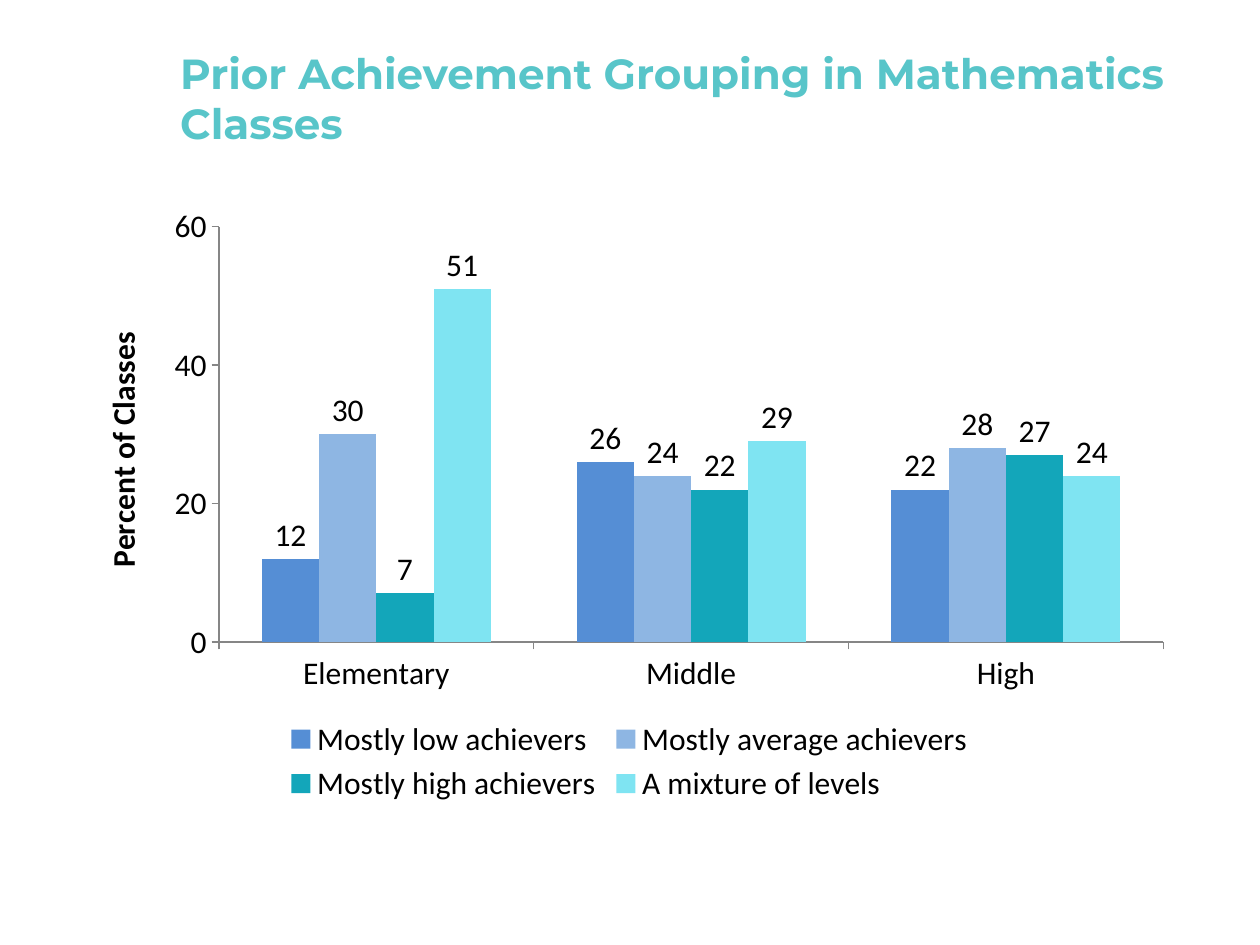
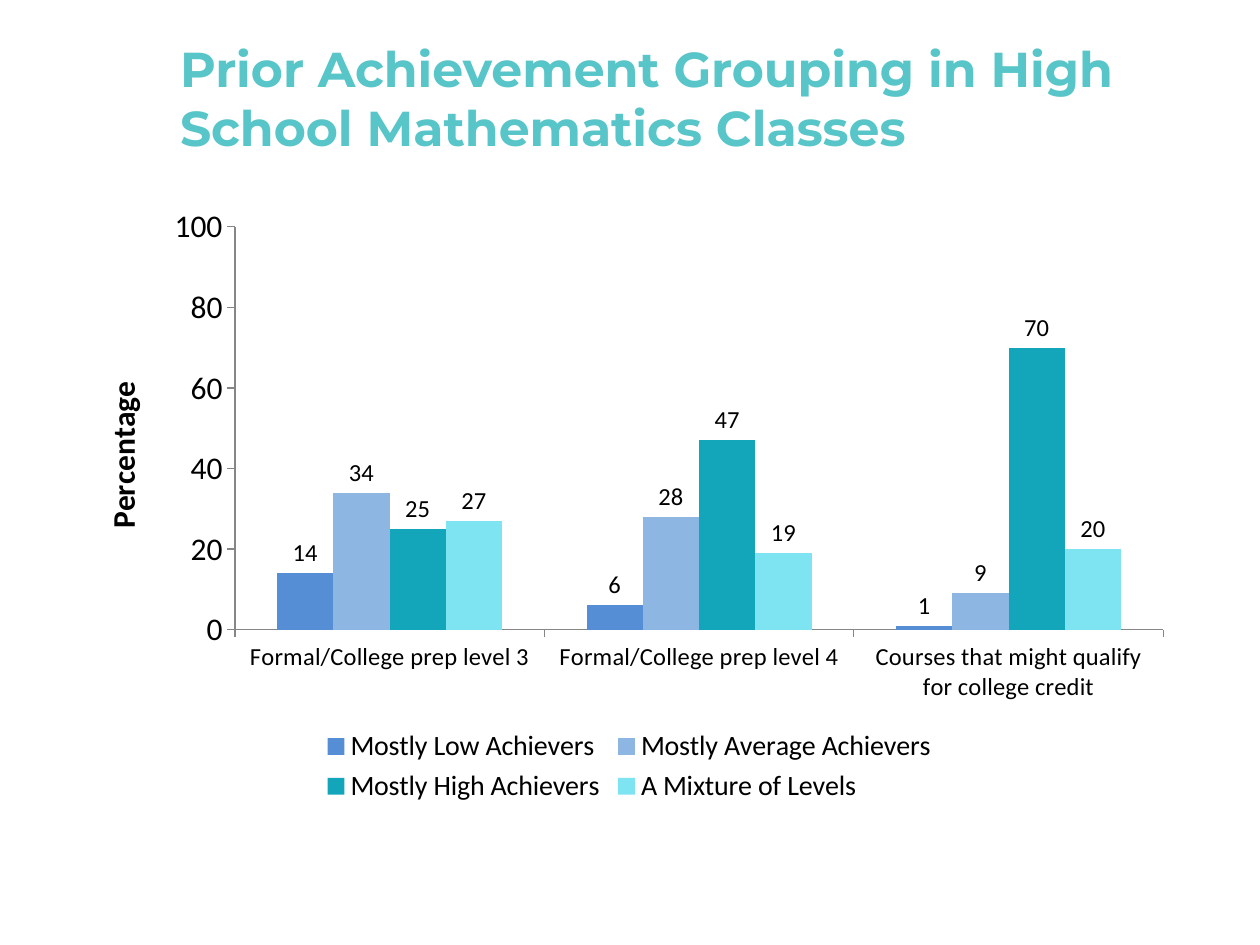
from pptx import Presentation
from pptx.chart.data import CategoryChartData
from pptx.dml.color import RGBColor
from pptx.enum.chart import XL_CHART_TYPE as CHART, XL_LABEL_POSITION as LABEL
from pptx.enum.chart import XL_LEGEND_POSITION as LEGEND, XL_TICK_MARK as TICK
from pptx.enum.text import MSO_ANCHOR as ANCHOR
from pptx.util import Cm, Pt

COLORS = {
    "title": "58C5C9",
    "text": "000000",
    "axis": "868686",
    "low": "558ED5",
    "average": "8EB6E3",
    "high": "13A6BA",
    "mixture": "7FE4F2",
}
LEVELS = ("low", "average", "high", "mixture")
TITLE_BOX = (Cm(3.38), Cm(0.76), Cm(20.75), Cm(2.41))
CHART_BOX = (Cm(1.47), Cm(3.94), Cm(22.43), Cm(12.37))

CHART_SLIDES = [
    {
        "title": "Prior Achievement Grouping in Mathematics Classes",
        "title_size": 24,
        "axis_title": "Percent of Classes",
        "maximum": 60,
        "sizes": {"category": 18, "label": 18, "legend": 18},
        "categories": ["Elementary", "Middle", "High"],
        "series": {
            "Mostly low achievers": (12, 26, 22),
            "Mostly average achievers": (30, 24, 28),
            "Mostly high achievers": (7, 22, 27),
            "A mixture of levels": (51, 29, 24),
        },
    },
    {
        "title": "Prior Achievement Grouping in High School Mathematics Classes",
        "title_size": 28,
        "axis_title": "Percentage",
        "maximum": 100,
        "sizes": {"category": 14, "label": 14, "legend": 16},
        "categories": [
            "Formal/College prep level 3",
            "Formal/College prep level 4",
            "Courses that might qualify for college credit",
        ],
        "series": {
            "Mostly Low Achievers": (14, 6, 1),
            "Mostly Average Achievers": (34, 28, 9),
            "Mostly High Achievers": (25, 47, 70),
            "A Mixture of Levels": (27, 19, 20),
        },
    },
]


def set_all(obj, **values):
    for name, value in values.items():
        setattr(obj, name, value)


class Deck:
    """Holds the presentation, its style and the current slide."""

    def __init__(self):
        self.prs = Presentation()
        set_all(self.prs, slide_width=Cm(25.4), slide_height=Cm(19.05))
        self.s = None

    def add_slide(self):
        self.s = self.prs.slides.add_slide(self.prs.slide_layouts[6])

    def font(self, font, size, color="text", name="Calibri", bold=False):
        set_all(font, size=Pt(size), name=name, bold=bold)
        font.color.rgb = RGBColor.from_string(COLORS[color])

    def title(self, text, size):
        tf = self.s.shapes.add_textbox(*TITLE_BOX).text_frame
        set_all(tf, word_wrap=True, vertical_anchor=ANCHOR.MIDDLE)
        r = tf.paragraphs[0].add_run()
        r.text = text
        self.font(r.font, size, "title", "Montserrat", True)

    def axis(self, axis, size):
        set_all(axis, has_major_gridlines=False,
                major_tick_mark=TICK.OUTSIDE, minor_tick_mark=TICK.NONE)
        axis.format.line.color.rgb = RGBColor.from_string(COLORS["axis"])
        axis.format.line.width = Pt(0.75)
        self.font(axis.tick_labels.font, size)

    def column_chart(self, categories, series, axis_title, maximum, sizes):
        data = CategoryChartData(number_format="0")
        data.categories = categories
        for name, values in series.items():
            data.add_series(name, values)
        chart = self.s.shapes.add_chart(
            CHART.COLUMN_CLUSTERED, *CHART_BOX, data).chart
        set_all(chart, has_title=False, has_legend=True)
        self.font(chart.font, 18)
        set_all(chart.legend, position=LEGEND.BOTTOM, include_in_layout=False)
        self.font(chart.legend.font, sizes["legend"])

        self.axis(chart.category_axis, sizes["category"])
        value_axis = chart.value_axis
        self.axis(value_axis, 18)
        set_all(value_axis, minimum_scale=0, maximum_scale=maximum, major_unit=20)
        p = value_axis.axis_title.text_frame.paragraphs[0]
        r = p.add_run()
        r.text = axis_title
        self.font(r.font, 18, bold=True)

        plot = chart.plots[0]
        set_all(plot, gap_width=150, overlap=0, vary_by_categories=False)
        for bars, level in zip(plot.series, LEVELS):
            bars.format.fill.solid()
            bars.format.fill.fore_color.rgb = RGBColor.from_string(COLORS[level])
            labels = bars.data_labels
            set_all(labels, show_value=True, position=LABEL.OUTSIDE_END)
            self.font(labels.font, sizes["label"])


def main():
    deck = Deck()
    for content in CHART_SLIDES:
        deck.add_slide()
        deck.column_chart(content["categories"], content["series"],
                          content["axis_title"], content["maximum"],
                          content["sizes"])
        deck.title(content["title"], content["title_size"])
    deck.prs.save("out.pptx")


if __name__ == "__main__":
    main()
